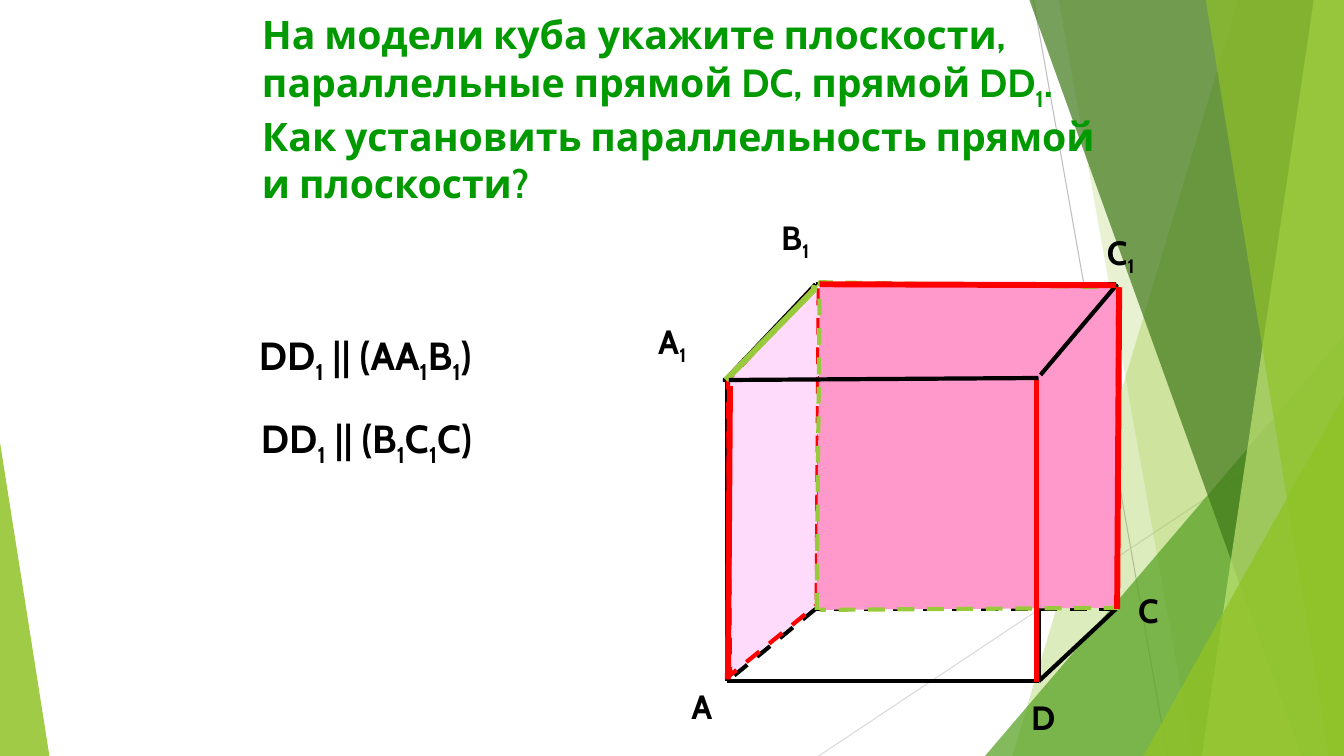
from lxml.etree import SubElement
from pptx import Presentation
from pptx.dml.color import RGBColor
from pptx.enum.dml import MSO_LINE
from pptx.enum.shapes import MSO_CONNECTOR, MSO_SHAPE
from pptx.enum.text import MSO_ANCHOR, PP_ALIGN
from pptx.oxml.ns import qn
from pptx.util import Inches, Pt

COLORS = {
    "white": "FFFFFF", "black": "000000", "red": "FF0000", "title": "009900",
    "edge green": "99CA3C", "side face": "FEDAFB", "back face": "FF99CC",
    "gray": "BFBFBF", "light gray": "D9D9D9", "lime": "90C226",
    "green": "54A021", "dark green": "3F7819", "pale lime": "C0E474",
}
FONT = "Cabin"


def rgb(name):
    return RGBColor.from_string(COLORS[name])


def set_fill(shape, color, opacity=100):
    shape.fill.solid()
    shape.fill.fore_color.rgb = rgb(color)
    if opacity < 100:
        color_element = shape.fill._xPr.find(qn("a:solidFill"))[0]
        SubElement(color_element, qn("a:alpha"), val=str(opacity * 1000))


def add_path(slide, box, points, color=None, width=0, dashed=False, fill=None, opacity=100):
    """Draw points given in inches from the box's top left corner."""
    left, top = box[:2]
    points = [(Inches(left + x), Inches(top + y)) for x, y in points]
    if len(points) == 2:
        shape = slide.shapes.add_connector(MSO_CONNECTOR.STRAIGHT, *points[0], *points[1])
        SubElement(shape._element.spPr, qn("a:effectLst"))
    else:
        builder = slide.shapes.build_freeform(*points[0])
        builder.add_line_segments(points[1:], close=color is None)
        shape = builder.convert_to_shape()
        shape.shadow.inherit = False
        if fill:
            set_fill(shape, fill, opacity)
        else:
            shape.fill.background()
    if color:
        shape.line.color.rgb = rgb(color)
        shape.line.width = Pt(width)
        if dashed:
            shape.line.dash_style = MSO_LINE.DASH
    else:
        shape.line.fill.background()


def add_runs(paragraph, text):
    """Add text in which the character after each underscore is a subscript."""
    first, *others = text.split("_")
    pieces = [(first, False)]
    for other in others:
        pieces += [(other[0], True), (other[1:], False)]
    for piece, subscript in pieces:
        if piece:
            run = paragraph.add_run()
            run.text = piece
            if subscript:
                run.font._element.set("baseline", "-25000")


def add_text(slide, box, text, size, color="black"):
    frame = slide.shapes.add_textbox(*map(Inches, box)).text_frame
    frame.word_wrap = True
    frame.vertical_anchor = MSO_ANCHOR.TOP
    paragraph = frame.paragraphs[0]
    paragraph.alignment = PP_ALIGN.LEFT
    paragraph.font.name = FONT
    paragraph.font.size = Pt(size)
    paragraph.font.bold = True
    paragraph.font.color.rgb = rgb(color)
    add_runs(paragraph, text)
    return paragraph


def add_backdrop(slide, box):
    left, top, width, height = box

    def add_band(top_inset, bottom_inset, color, opacity):
        corners = [(width - top_inset, 0), (width, 0),
                   (width, height), (width - bottom_inset, height)]
        add_path(slide, box, corners, fill=color, opacity=opacity)

    def add_corner(x, corner_width, corner_height, peak, color, opacity):
        shape = slide.shapes.add_shape(
            MSO_SHAPE.ISOSCELES_TRIANGLE, Inches(left + x),
            Inches(top + height - corner_height), Inches(corner_width), Inches(corner_height))
        shape.adjustments[0] = peak
        shape.shadow.inherit = False
        set_fill(shape, color, opacity)
        shape.line.fill.background()

    add_path(slide, box, [(10.25, 0), (11.58, height)], "gray", 0.75)
    add_path(slide, box, [(width, 4.03), (8.12, height)], "light gray", 0.75)
    # Bands are set in from the right edge by their top and bottom insets
    add_band(1.05, 3.29, "lime", 30)
    add_band(2.83, 1.5, "lime", 20)
    add_corner(width - 3.56, 3.56, 4.17, 1, "green", 72)
    add_band(3.12, 0.42, "dark green", 70)
    add_band(0.3, 1.41, "pale lime", 70)
    add_band(1.37, 0.15, "lime", 65)
    add_corner(width - 1.99, 1.99, 3.57, 1, "lime", 80)
    add_corner(0, 0.49, 3.11, 0, "lime", 85)


def add_title(slide, box):
    paragraph = add_text(slide, box, "На модели куба", 28, "title")
    space = paragraph.add_run()
    space.text = " "
    space.font.size = Pt(32)
    space.font.bold = False
    add_runs(paragraph, "укажите плоскости, параллельные прямой DC, прямой DD_1.")
    paragraph.add_line_break()
    add_runs(paragraph, "Как установить параллельность прямой и плоскости?")


def add_cube(slide, box):
    left, top, width, height = box
    front_right, back_left = width - 0.77, 0.88
    front_top, back_bottom = 0.93, height - 0.72
    vertices = {
        "A": (0, height), "D": (front_right, height),
        "B": (back_left, back_bottom), "C": (width, back_bottom),
        "A1": (0, front_top), "D1": (front_right, front_top),
        "B1": (back_left, 0), "C1": (width, 0),
    }

    # Edges; those that meet at B are hidden
    for edge in ("B1 C1", "B1 A1", "A1 D1", "C1 D1", "A1 A", "D1 D",
                 "A D", "C1 C", "D C", "B1 B", "C B", "B A"):
        ends = edge.split()
        add_path(slide, box, [vertices[end] for end in ends], "black", 3, "B" in ends)

    # Vertex labels
    for text, x, y, label_width in (
            ("A_1", -0.78, 0.31, 1.11), ("B_1", 0.44, -0.72, 1.66),
            ("A", -0.45, 3.94, 1.55), ("D", 2.92, 4.04, 1.77),
            ("C_1", 3.67, -0.57, 1.57), ("C", 3.98, 2.98, 0.94)):
        add_text(slide, (left + x, top + y, label_width, 0.5), text, 24)

    # Highlighted faces and edges, back to front
    side_face = [(0.89, 3.13), (0.91, -0.01), (0.01, 0.95), (0.03, 3.88), (0.93, 3.15)]
    back_face = [(0.89, 3.23), (0.92, -0.02), (3.87, 0.03), (3.87, 3.21), (0.92, 3.23)]
    for points, color, line_width, fill in (
            ([(-0.04, 0.95), (1.04, 0.93)], "black", 3, None),
            (side_face, "red", 3, "side face"),
            ([(0.01, 3.92), (0.03, 1.01)], "red", 4.25, None),
            ([(-0.01, 0.95), (0.86, 0.06), (0.87, 0.01)], "edge green", 4.25, None),
            (back_face, "edge green", 3, "back face"),
            ([(3.07, 3.95), (3.07, 0.95)], "red", 3, None),
            ([(3.11, 0.9), (3.87, 0)], "black", 3, None),
            ([(0.02, 0.95), (3.09, 0.93)], "black", 3, None),
            ([(3.87, 3.22), (3.89, 0.03)], "red", 4.25, None),
            ([(0.92, 0), (3.86, 0.01)], "red", 4.25, None)):
        add_path(slide, box, points, color, line_width, dashed=bool(fill), fill=fill)


def add_answers(slide, box):
    left, top, width, height = box
    add_text(slide, (left, top, width, 0.57), "DD_1 || (AA_1B_1)", 28)
    add_text(slide, (left + 0.02, top + height - 0.57, width, 0.57), "DD_1 || (B_1C_1C)", 28)


def main():
    presentation = Presentation()
    presentation.slide_width = Inches(13.33)
    presentation.slide_height = Inches(7.5)
    slide = presentation.slides.add_slide(presentation.slide_layouts[6])
    slide.background.fill.solid()
    slide.background.fill.fore_color.rgb = rgb("white")
    add_backdrop(slide, (0, 0, 13.33, 7.5))
    add_title(slide, (2.5, 0, 8.51, 2.18))
    add_cube(slide, (7.21, 2.82, 3.86, 3.94))
    add_answers(slide, (2.47, 3.24, 2.88, 1.39))
    presentation.save("out.pptx")


if __name__ == "__main__":
    main()
